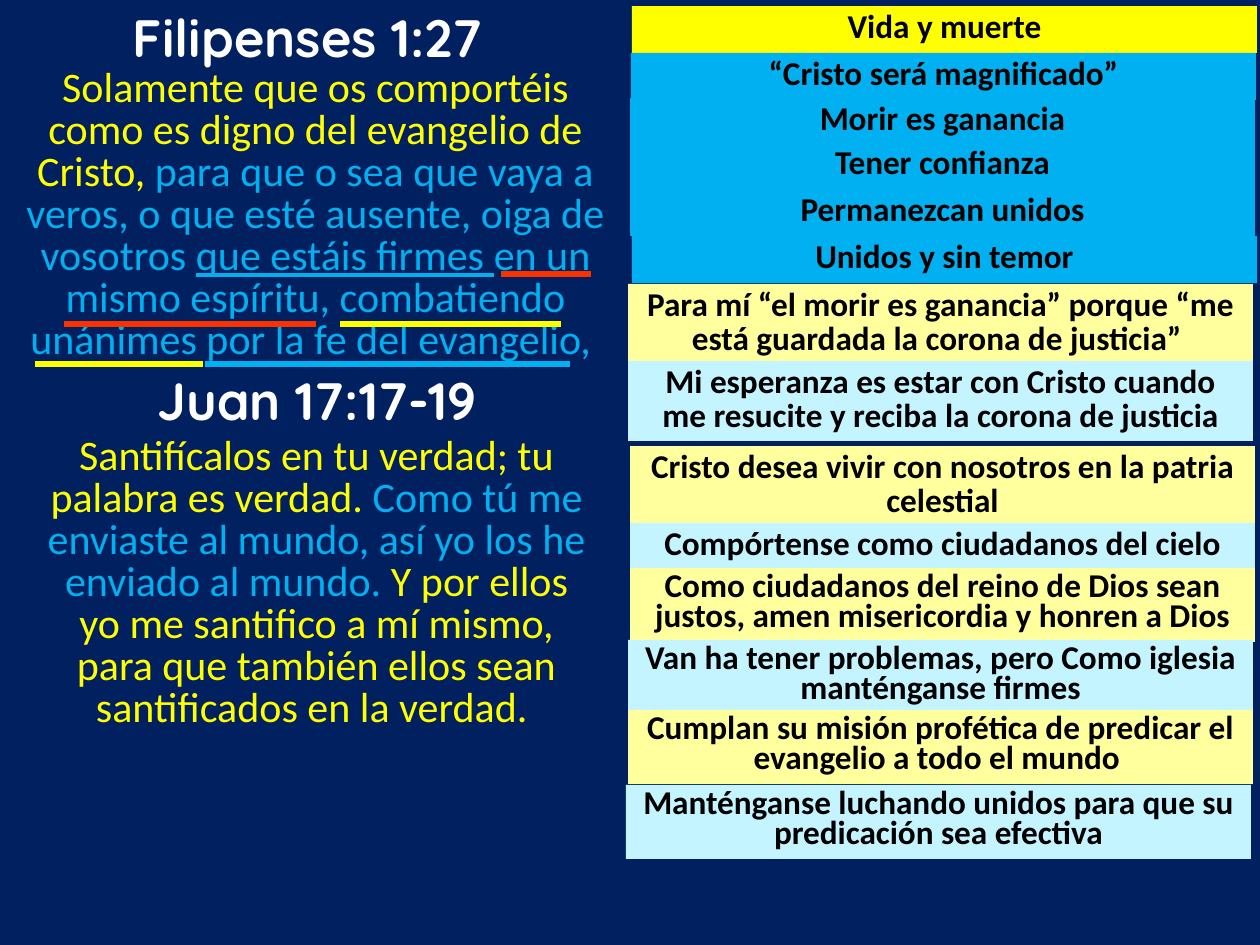
from typing import NamedTuple, Optional

from lxml.etree import SubElement
from pptx import Presentation
from pptx.dml.color import RGBColor
from pptx.enum.shapes import MSO_CONNECTOR, MSO_SHAPE
from pptx.enum.text import MSO_ANCHOR, MSO_AUTO_SIZE, PP_ALIGN
from pptx.oxml.ns import qn
from pptx.util import Emu, Pt

YELLOW, BLUE, RED = "FFFF00", "00B0F0", "F93200"
CREAM, ICE = "FFFF9E", "C3F4FF"
WHITE, BLACK, NAVY = "FFFFFF", "000000", "002060"


class Run(NamedTuple):
    text: str
    color: str
    under: bool = False


class Bar(NamedTuple):
    left: int
    top: int
    high: int
    fill: str
    text: str
    lead: int = 19


class Verse(NamedTuple):
    left: int
    top: int
    wide: int
    high: int
    runs: list[Run]
    font: str = "Calibri"
    size: int = 24
    lead: Optional[int] = 24
    bold: bool = False


class Rule(NamedTuple):
    start: int
    end: int
    y: int
    color: str


def px(n: int) -> Emu:
    return Emu(round(n * 914400 / 126))


def rgb(code: str) -> RGBColor:
    return RGBColor.from_string(code)


def write(shape, runs: list[Run], *, font: str = "Calibri", size: int = 19,
          bold: bool = False, lead: Optional[int] = None) -> None:
    frame = shape.text_frame
    frame.word_wrap = True
    frame.auto_size = MSO_AUTO_SIZE.SHAPE_TO_FIT_TEXT
    frame.vertical_anchor = MSO_ANCHOR.TOP
    para = frame.paragraphs[0]
    para.alignment = PP_ALIGN.CENTER
    if lead:
        para.line_spacing = Pt(lead)
    for item in runs:
        run = para.add_run()
        run.text = item.text
        face = run.font
        face.name, face.size, face.bold = font, Pt(size), bold
        face.color.rgb = rgb(item.color)
        if item.under:
            face.underline = True


def draw_bar(slide, bar: Bar) -> None:
    shape = slide.shapes.add_shape(MSO_SHAPE.RECTANGLE, px(bar.left), px(bar.top),
                                   px(625), px(bar.high))
    shape.shadow.inherit = False
    shape.fill.solid()
    shape.fill.fore_color.rgb = rgb(bar.fill)
    shape.line.fill.background()
    write(shape, [Run(bar.text, BLACK)], bold=True, lead=bar.lead)


def draw_verse(slide, part: Verse) -> None:
    box = slide.shapes.add_textbox(px(part.left), px(part.top),
                                   px(part.wide), px(part.high))
    write(box, part.runs, font=part.font, size=part.size,
          bold=part.bold, lead=part.lead)


def draw_rule(slide, rule: Rule) -> None:
    line = slide.shapes.add_connector(MSO_CONNECTOR.STRAIGHT, px(rule.start), px(rule.y),
                                      px(rule.end), px(rule.y))
    line.line.color.rgb = rgb(rule.color)
    line.line.width = Pt(3)
    SubElement(line._element.spPr, qn("a:effectLst"))


def title(left: int, top: int, text: str) -> Verse:
    return Verse(left, top, 586, 77, [Run(text, WHITE)], "Quicksand", 30, None, True)


# Lesson points, top to bottom
BARS = [
    Bar(632, 6, 47, YELLOW, "Vida y muerte"),
    Bar(631, 53, 47, BLUE, "“Cristo será magnificado”"),
    Bar(630, 98, 47, BLUE, "Morir es ganancia"),
    Bar(630, 142, 47, BLUE, "Tener confianza"),
    Bar(630, 189, 47, BLUE, "Permanezcan unidos"),
    Bar(632, 236, 47, BLUE, "Unidos y sin temor"),
    Bar(628, 284, 80, CREAM,
        "Para mí “el morir es ganancia” porque “me está guardada la corona de justicia” "),
    Bar(628, 361, 80, ICE,
        "Mi esperanza es estar con Cristo cuando me resucite y reciba la corona de justicia"),
    Bar(630, 446, 80, CREAM, "Cristo desea vivir con nosotros en la patria celestial"),
    Bar(630, 523, 47, ICE, "Compórtense como ciudadanos del cielo"),
    Bar(630, 568, 74, CREAM,
        "Como ciudadanos del reino de Dios sean justos, amen misericordia y honren a Dios", 17),
    Bar(628, 640, 74, ICE,
        "Van ha tener problemas, pero Como iglesia manténganse firmes", 17),
    Bar(628, 710, 74, CREAM,
        "Cumplan su misión profética de predicar el evangelio a todo el mundo ", 17),
    Bar(626, 785, 74, ICE,
        "Manténganse luchando unidos para que su predicación sea efectiva", 17),
]

# Bible passages
VERSES = [
    title(15, -1, "Filipenses 1:27"),
    Verse(0, 63, 631, 310, [
        Run("Solamente que os comportéis como es digno del evangelio de Cristo, ", YELLOW),
        Run("para que o sea que vaya a veros, o que esté ausente, oiga de vosotros ", BLUE),
        Run("que estáis firmes ", BLUE, True),
        Run("en un mismo espíritu, combatiendo unánimes por la fe del evangelio, ", BLUE),
    ]),
    title(24, 362, "Juan 17:17-19"),
    Verse(35, 431, 563, 310, [
        Run("Santifícalos en tu verdad; tu palabra es verdad. ", YELLOW),
        Run("Como tú me enviaste al mundo, así yo los he enviado al mundo. ", BLUE),
        Run("Y por ellos yo me santifico a mí mismo, para que también ellos sean "
            "santificados en la verdad. ", YELLOW),
    ]),
]

# Underlines on key phrases
RULES = [
    Rule(64, 316, 324, RED),
    Rule(501, 591, 274, RED),
    Rule(340, 561, 324, YELLOW),
    Rule(35, 203, 364, YELLOW),
    Rule(205, 570, 364, BLUE),
]


def main() -> None:
    deck = Presentation()
    deck.slide_width, deck.slide_height = px(1260), px(945)
    slide = deck.slides.add_slide(deck.slide_layouts[6])
    slide.background.fill.solid()
    slide.background.fill.fore_color.rgb = rgb(NAVY)
    for bar in BARS:
        draw_bar(slide, bar)
    for part in VERSES:
        draw_verse(slide, part)
    for rule in RULES:
        draw_rule(slide, rule)
    deck.save("out.pptx")


if __name__ == "__main__":
    main()
